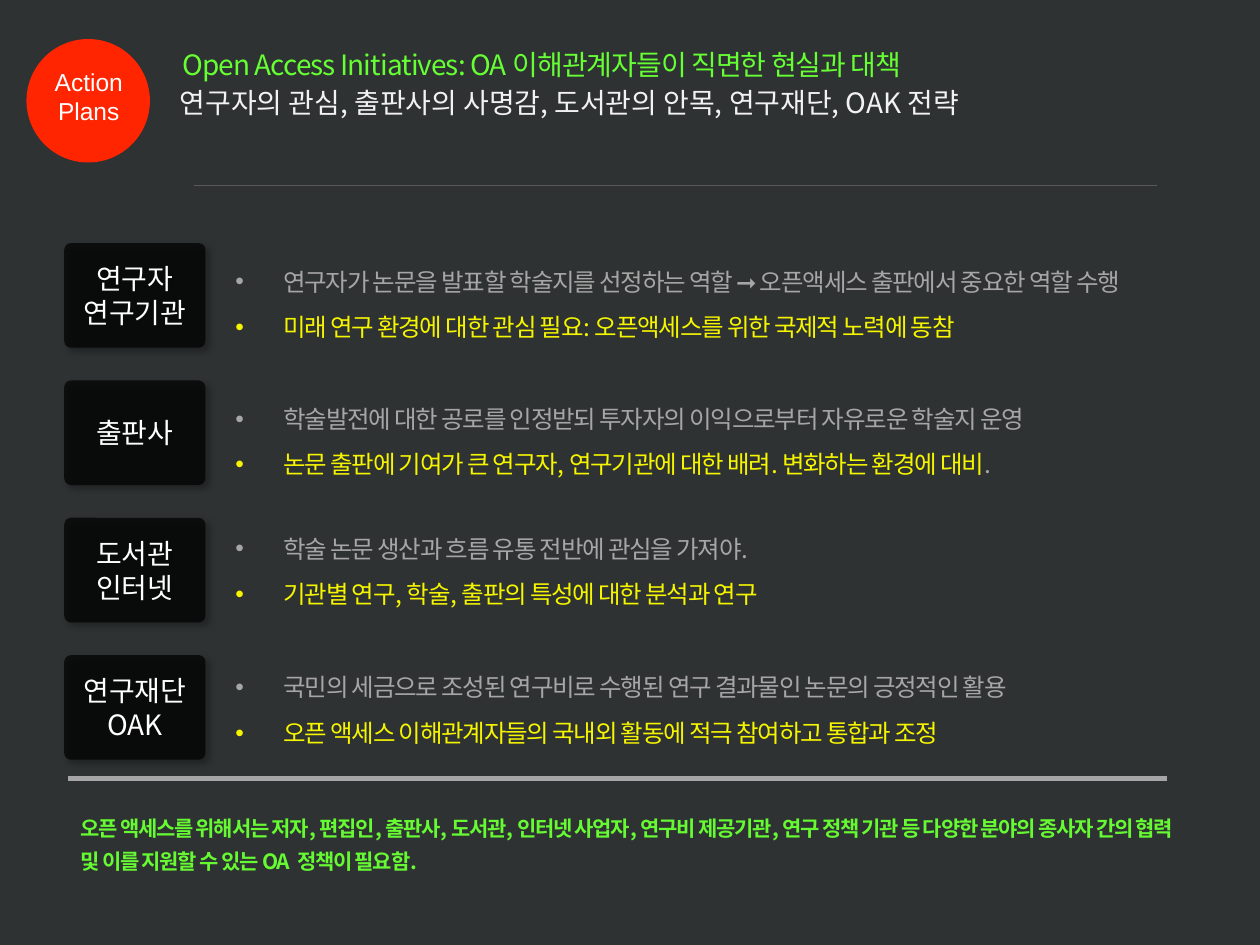
from collections import namedtuple

from lxml import etree
from pptx import Presentation
from pptx.dml.color import RGBColor
from pptx.enum.shapes import MSO_CONNECTOR, MSO_SHAPE
from pptx.enum.text import MSO_ANCHOR, MSO_AUTO_SIZE, PP_ALIGN
from pptx.oxml.ns import qn
from pptx.util import Inches, Pt

BACKGROUND = RGBColor(0x2E, 0x32, 0x32)
RED = RGBColor(0xFE, 0x25, 0x00)
BLACK = RGBColor(0x00, 0x00, 0x00)
WHITE = RGBColor(0xFF, 0xFF, 0xFF)
OFF_WHITE = RGBColor(0xF2, 0xF2, 0xF2)
GREY = RGBColor(0xA6, 0xA6, 0xA6)
DARK_GREY = RGBColor(0x59, 0x59, 0x59)
YELLOW = RGBColor(0xF6, 0xF5, 0x00)
TITLE_GREEN = RGBColor(0x66, 0xFF, 0x33)
CLOSING_GREEN = RGBColor(0x66, 0xFA, 0x33)

KOREAN_FONT = "Noto Sans CJK KR"
LATIN_FONT = "Arial"

Box = namedtuple("Box", "left top width height")

ROW_TOP, ROW_PITCH, ROW_HEIGHT = 1.93, 1.09, 0.83
TILE_WIDTH, BULLETS_OFFSET = 1.12, 1.26

# tile lines, present situation, task ahead, bullet drop below the tile top, bullet width
STAKEHOLDERS = [
    (["연구자", "연구기관"],
     "연구자가 논문을 발표할 학술지를 선정하는 역할 ➞ 오픈액세스 출판에서 중요한 역할 수행",
     ["미래 연구 환경에 대한 관심 필요: 오픈액세스를 위한 국제적 노력에 동참"], 0.01, 8.16),
    (["출판사"],
     "학술발전에 대한 공로를 인정받되 투자자의 이익으로부터 자유로운 학술지 운영",
     ["논문 출판에 기여가 큰 연구자, 연구기관에 대한 배려. 변화하는 환경에 대비", "."], 0.01, 7.65),
    (["도서관", "인터넷"],
     "학술 논문 생산과 흐름 유통 전반에 관심을 가져야.",
     ["기관별 연구, 학술, 출판의 특성에 대한 분석과 연구"], -0.05, 7.65),
    (["연구재단", "OAK"],
     "국민의 세금으로 조성된 연구비로 수행된 연구 결과물인 논문의 긍정적인 활용",
     ["오픈 액세스 이해관계자들의 국내외 활동에 적극 참여하고 통합과 조정"], -0.04, 7.49),
]


def inches(box):
    return [Inches(length) for length in box]


def format_run(run, size, color, font=KOREAN_FONT, bold=None, spacing=0):
    run.font.size = Pt(size)
    run.font.name = font
    run.font.bold = bold
    run.font.color.rgb = color
    properties = run.font._element
    if spacing:
        properties.set("spc", str(round(spacing * 100)))
    etree.SubElement(properties, qn("a:ea"), typeface=font)


def write_lines(text_frame, lines, align=None, line_spacing=None, **style):
    text_frame.text = "\n".join(lines)
    for paragraph in text_frame.paragraphs:
        paragraph.alignment = align
        if line_spacing:
            paragraph.line_spacing = Pt(line_spacing)
        for run in paragraph.runs:
            format_run(run, **style)


def add_text_box(slide, box):
    text_frame = slide.shapes.add_textbox(*inches(box)).text_frame
    text_frame.word_wrap = True
    text_frame.auto_size = MSO_AUTO_SIZE.SHAPE_TO_FIT_TEXT
    return text_frame


def add_filled_shape(slide, kind, box, color):
    shape = slide.shapes.add_shape(kind, *inches(box))
    shape.shadow.inherit = False
    shape.fill.solid()
    shape.fill.fore_color.rgb = color
    shape.line.fill.background()
    return shape


def add_rule(slide, left, right, top, color, width):
    rule = slide.shapes.add_connector(
        MSO_CONNECTOR.STRAIGHT, Inches(left), Inches(top), Inches(right), Inches(top))
    rule.line.color.rgb = color
    rule.line.width = Pt(width)
    etree.SubElement(rule._element.spPr, qn("a:effectLst"))


def add_bullet(paragraph):
    properties = paragraph._p.get_or_add_pPr()
    indent = Inches(0.38)
    properties.set("marL", str(indent))
    properties.set("indent", str(-indent))
    etree.SubElement(properties, qn("a:buFont"), typeface=LATIN_FONT)
    etree.SubElement(properties, qn("a:buChar"), char="•")


def add_alpha(color_element, percent):
    etree.SubElement(color_element, qn("a:alpha"), val=str(percent * 1000))


def soften_tile(shape):
    """Make the fill translucent and cast a soft shadow to the lower right."""
    properties = shape._element.spPr
    add_alpha(properties.find(qn("a:solidFill"))[0], 70)
    shadow = etree.SubElement(
        properties.find(qn("a:effectLst")), qn("a:outerShdw"), blurRad=str(Pt(4)),
        dist=str(Pt(3)), dir=str(45 * 60000), algn="tl", rotWithShape="0")
    add_alpha(etree.SubElement(shadow, qn("a:srgbClr"), val=str(BLACK)), 40)


def add_header(slide, box):
    diameter = 0.98
    add_filled_shape(slide, MSO_SHAPE.OVAL,
                     Box(box.left, box.top, diameter, diameter), RED)
    label = add_text_box(slide, Box(box.left - 0.11, box.top + 0.17, 1.21, 0.57))
    write_lines(label, ["Action", "Plans"], PP_ALIGN.CENTER,
                size=14, color=WHITE, font=LATIN_FONT)

    title = add_text_box(slide, Box(box.left + 1.14, box.top + 0.02, 7.99, 0.37))
    write_lines(title, ["Open Access Initiatives: OA 이해관계자들이 직면한 현실과 대책"],
                size=16, color=TITLE_GREEN, spacing=-0.5)
    subtitle = add_text_box(slide, Box(box.left + 1.12, box.top + 0.32, 6.77, 0.37))
    write_lines(subtitle, ["연구자의 관심, 출판사의 사명감, 도서관의 안목, 연구재단, OAK 전략"],
                line_spacing=19, size=16, color=OFF_WHITE)
    add_rule(slide, box.left + 1.33, box.left + box.width,
             box.top + box.height, DARK_GREY, 0.75)


def add_tile(slide, box, lines):
    tile = add_filled_shape(slide, MSO_SHAPE.ROUNDED_RECTANGLE, box, BLACK)
    tile.adjustments[0] = 0.063
    soften_tile(tile)
    text_frame = tile.text_frame
    text_frame.margin_left = text_frame.margin_right = Inches(0.05)
    text_frame.vertical_anchor = MSO_ANCHOR.MIDDLE
    write_lines(text_frame, lines, PP_ALIGN.CENTER, size=16, color=WHITE)


def add_bullets(slide, box, situation, task):
    """Write the situation in grey and the task in yellow, with any closing mark in grey."""
    text_frame = add_text_box(slide, box)
    paragraphs = [text_frame.paragraphs[0], text_frame.add_paragraph()]
    for paragraph, parts, colors in zip(paragraphs, [[situation], task],
                                        [[GREY], [YELLOW, GREY]]):
        paragraph.line_spacing = Pt(26)
        add_bullet(paragraph)
        for part, color in zip(parts, colors):
            run = paragraph.add_run()
            run.text = part
            format_run(run, 14, color, spacing=-0.7)


def add_stakeholder_row(slide, box, lines, situation, task, drop):
    add_tile(slide, Box(box.left, box.top, TILE_WIDTH, box.height), lines)
    add_bullets(slide, Box(box.left + BULLETS_OFFSET, box.top + drop,
                           box.width - BULLETS_OFFSET, box.height), situation, task)


def add_closing(slide, box):
    add_rule(slide, box.left, box.left + 8.72, box.top, GREY, 3)
    text_frame = add_text_box(
        slide, Box(box.left, box.top + 0.18, box.width, box.height - 0.18))
    write_lines(text_frame, [
        "오픈 액세스를 위해서는 저자, 편집인, 출판사, 도서관, 인터넷 사업자, 연구비 제공기관, "
        "연구 정책 기관 등 다양한 분야의 종사자 간의 협력 및 이를 지원할 수 있는 OA  정책이 필요함."],
        line_spacing=19, size=12, color=CLOSING_GREEN, bold=True, spacing=-0.7)


def main():
    presentation = Presentation()
    presentation.slide_width, presentation.slide_height = Inches(10), Inches(7.5)
    slide = presentation.slides.add_slide(presentation.slide_layouts[6])
    slide.background.fill.solid()
    slide.background.fill.fore_color.rgb = BACKGROUND

    add_header(slide, Box(0.21, 0.31, 8.97, 1.16))
    for index, (lines, situation, task, drop, width) in enumerate(STAKEHOLDERS):
        row = Box(0.51, ROW_TOP + index * ROW_PITCH, BULLETS_OFFSET + width, ROW_HEIGHT)
        add_stakeholder_row(slide, row, lines, situation, task, drop)
    add_closing(slide, Box(0.54, 6.18, 8.99, 0.81))
    presentation.save("out.pptx")


if __name__ == "__main__":
    main()
